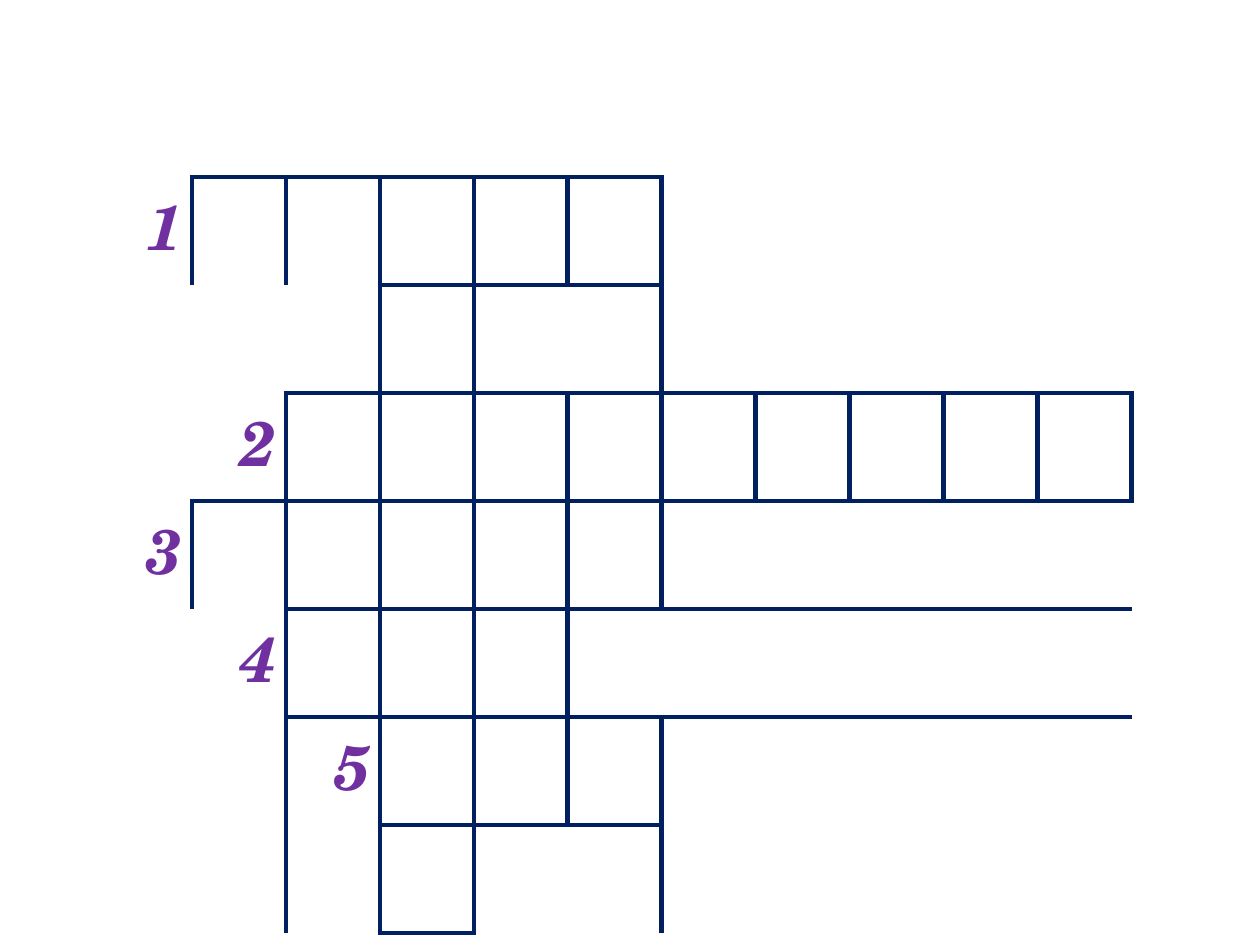
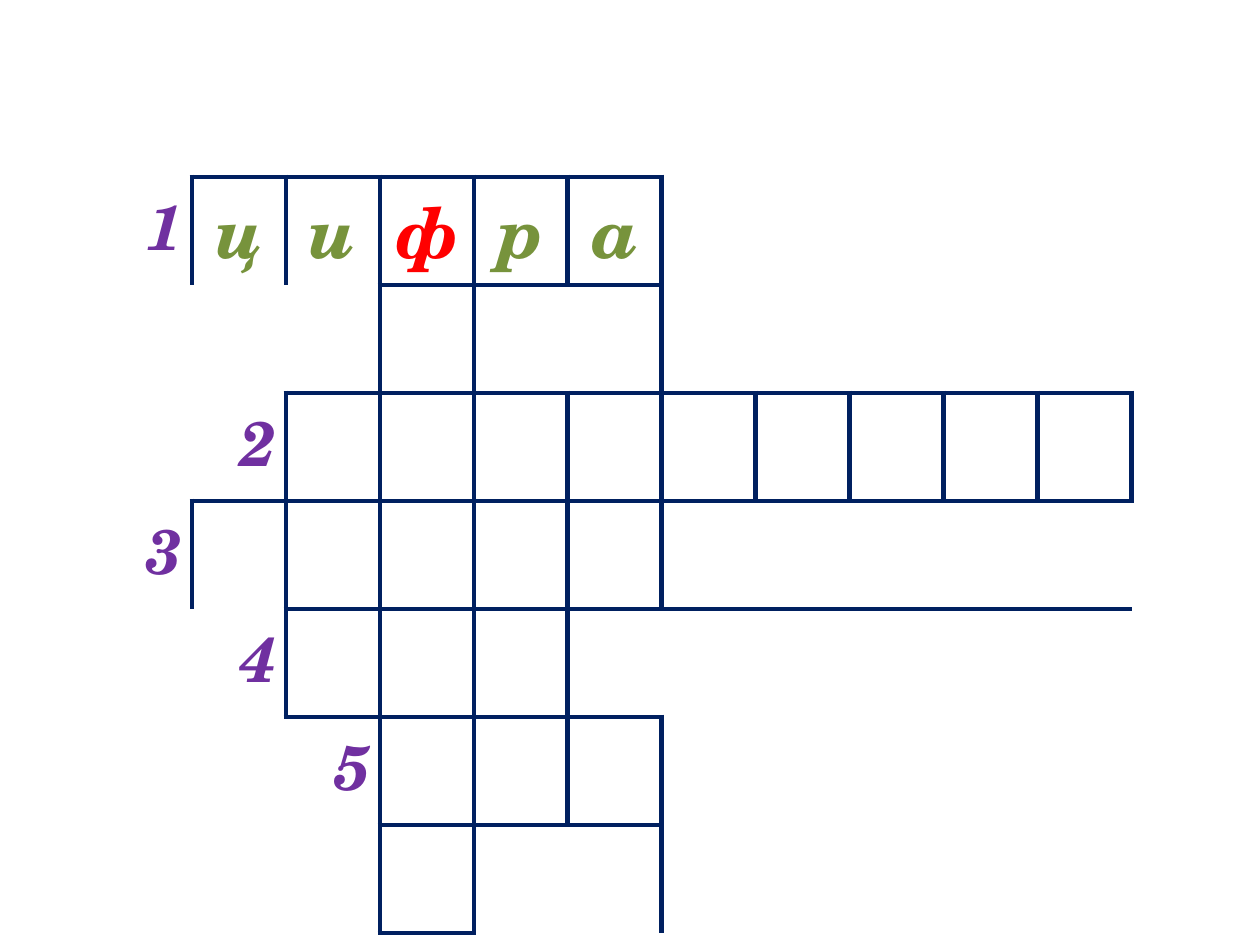
from lxml.etree import SubElement
from pptx import Presentation
from pptx.dml.color import RGBColor
from pptx.enum.text import MSO_ANCHOR as Anchor, PP_ALIGN as Align
from pptx.oxml.ns import qn
from pptx.util import Pt

EMU_PER_PX = 914400 / 126
NAVY = RGBColor(0x00, 0x20, 0x60)
PURPLE = RGBColor(0x70, 0x30, 0xA0)
GREEN = RGBColor(0x77, 0x93, 0x3C)
RED = RGBColor(0xFF, 0x00, 0x00)
FONT = "TeX Gyre Schola"

ROWS, COLS = 7, 11
CELL_WIDTH, CELL_HEIGHT = 94, 108
GRID_LEFT, GRID_TOP = 98, 177
SIDE_MARGIN = 9
LINE_WIDTH = 3
KEY_COLUMN = 3

# Clue number: (row, column)
CLUES = {"1": (0, 0), "2": (2, 0), "3": (3, 0), "4": (4, 0), "5": (5, 2)}

# Merged areas: (row, column) -> (rows, columns)
SHARED_MERGES = {
    (0, 6): (2, 4), (0, 10): (2, 1), (1, 0): (1, 3), (1, 4): (1, 2),
    (2, 0): (1, 2), (3, 6): (1, 5), (5, 2): (2, 1), (5, 6): (2, 5),
    (6, 0): (1, 2), (6, 4): (1, 2),
}
EMPTY_MERGES = SHARED_MERGES | {(4, 0): (2, 2), (4, 5): (1, 6)}
ANSWER_MERGES = SHARED_MERGES | {(4, 0): (1, 2), (4, 6): (1, 5),
                                 (5, 0): (1, 2)}

# Grid line number -> stretches (start, end) that are ruled
SHARED_ACROSS = {0: [(1, 6)], 1: [(3, 6)], 2: [(2, 11)], 3: [(1, 11)],
                 4: [(2, 11)], 6: [(3, 6)], 7: [(3, 4)]}
SHARED_DOWN = {1: [(0, 1), (3, 4)], 3: [(0, 7)], 4: [(0, 7)],
               5: [(0, 1), (2, 6)], 6: [(0, 4), (5, 7)],
               **{line: [(2, 3)] for line in range(7, 12)}}
EMPTY_RULES = (SHARED_ACROSS | {5: [(2, 11)]},
               SHARED_DOWN | {2: [(0, 1), (2, 7)]})
ANSWER_RULES = (SHARED_ACROSS | {5: [(2, 6)]},
                SHARED_DOWN | {2: [(0, 1), (2, 5)]})


def px(length):
    return round(length * EMU_PER_PX)


def is_ruled(rules, line, start, end):
    """Tell whether a grid line is ruled all the way from start to end."""
    return any(a <= start and end <= b for a, b in rules.get(line, []))


def set_border(cell, side, ruled):
    border = SubElement(cell._tc.get_or_add_tcPr(), qn(f"a:ln{side}"),
                        w=str(Pt(LINE_WIDTH) if ruled else 0))
    if ruled:
        fill = SubElement(border, qn("a:solidFill"))
        SubElement(fill, qn("a:srgbClr"), val=str(NAVY))
    else:
        SubElement(border, qn("a:noFill"))


def format_cell(cell, row, col, span, rules):
    across, down = rules
    bottom, right = row + span[0], col + span[1]
    set_border(cell, "L", is_ruled(down, col, row, bottom))
    set_border(cell, "R", is_ruled(down, right, row, bottom))
    set_border(cell, "T", is_ruled(across, row, col, right))
    set_border(cell, "B", is_ruled(across, bottom, col, right))
    cell.fill.background()
    cell.margin_left = cell.margin_right = px(SIDE_MARGIN)
    cell.margin_top = cell.margin_bottom = 0


def write(cell, text, *, size, color, align, anchor=Anchor.TOP):
    cell.vertical_anchor = anchor
    paragraph = cell.text_frame.paragraphs[0]
    paragraph.alignment = align
    run = paragraph.add_run()
    run.text = text
    font = run.font
    font.name, font.size = FONT, Pt(size)
    font.bold = font.italic = True
    font.color.rgb = color


def add_crossword(slide, merges, rules):
    grid = slide.shapes.add_table(
        ROWS, COLS, px(GRID_LEFT), px(GRID_TOP),
        px(COLS * CELL_WIDTH), px(ROWS * CELL_HEIGHT)).table
    grid.first_row = grid.horz_banding = False
    for column in grid.columns:
        column.width = px(CELL_WIDTH)
    for grid_row in grid.rows:
        grid_row.height = px(CELL_HEIGHT)
    for row in range(ROWS):
        for col in range(COLS):
            span = merges.get((row, col), (1, 1))
            format_cell(grid.cell(row, col), row, col, span, rules)
    for (row, col), (height, width) in merges.items():
        grid.cell(row, col).merge(grid.cell(row + height - 1, col + width - 1))
    for number, place in CLUES.items():
        write(grid.cell(*place), number, size=36, color=PURPLE,
              align=Align.RIGHT)
    return grid


def write_answer(grid, word, row, first_col):
    for col, letter in enumerate(word, first_col):
        write(grid.cell(row, col), letter, size=40,
              color=RED if col == KEY_COLUMN else GREEN,
              align=Align.CENTER, anchor=Anchor.MIDDLE)


def main():
    deck = Presentation()
    deck.slide_width, deck.slide_height = px(1260), px(945)
    blank = deck.slide_layouts[6]
    add_crossword(deck.slides.add_slide(blank), EMPTY_MERGES, EMPTY_RULES)
    answered = add_crossword(deck.slides.add_slide(blank),
                             ANSWER_MERGES, ANSWER_RULES)
    write_answer(answered, "цифра", row=0, first_col=1)
    deck.save("out.pptx")


if __name__ == "__main__":
    main()
